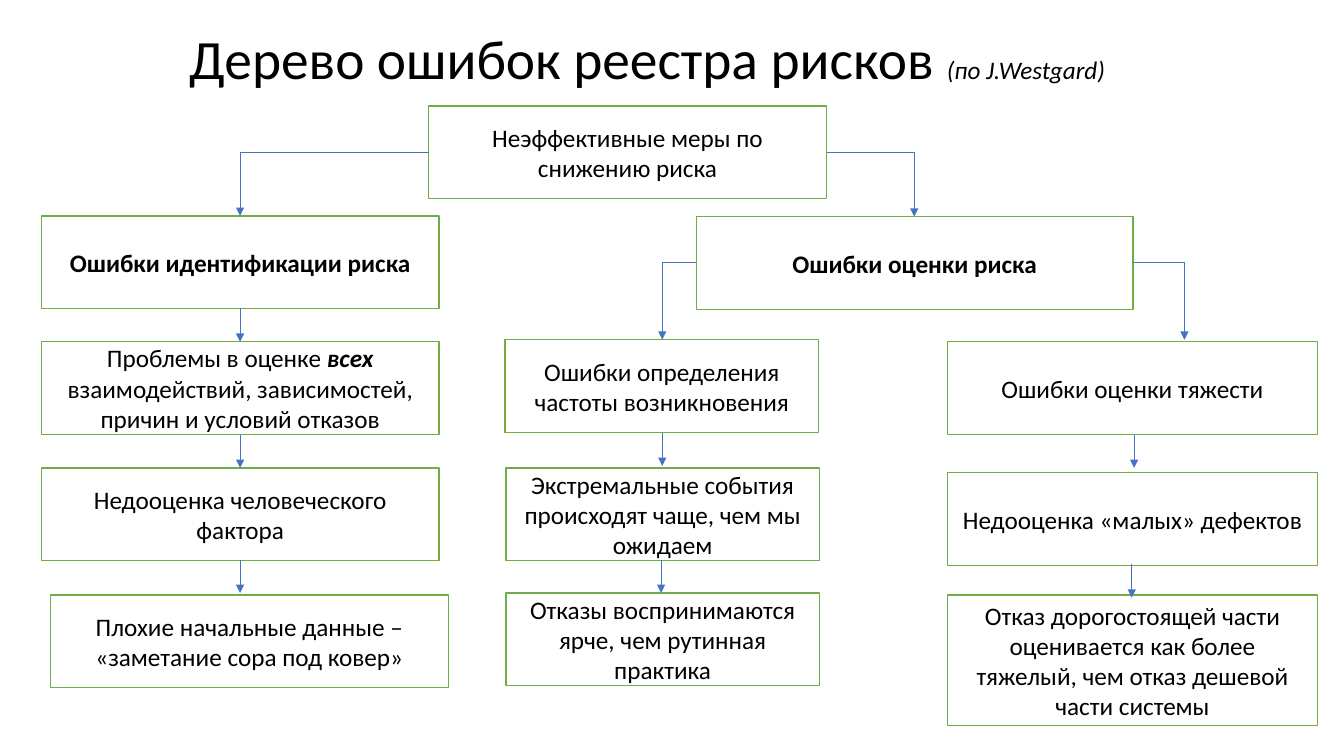
from dataclasses import dataclass

from lxml import etree
from pptx import Presentation
from pptx.dml.color import RGBColor
from pptx.enum.shapes import MSO_CONNECTOR, MSO_SHAPE
from pptx.enum.text import MSO_ANCHOR, PP_ALIGN
from pptx.oxml.ns import qn
from pptx.slide import Slide
from pptx.text.text import _Paragraph
from pptx.util import Cm, Pt

RECTANGLE = MSO_SHAPE.RECTANGLE
STRAIGHT = MSO_CONNECTOR.STRAIGHT
ELBOW = MSO_CONNECTOR.ELBOW
MIDDLE = MSO_ANCHOR.MIDDLE
CENTER = PP_ALIGN.CENTER

FONT = "Calibri"
BLACK = "000000"
WHITE = "FFFFFF"
GREEN = "70AD47"
BLUE = "4472C4"
BODY_SIZE = 18
BOX_HEIGHT = 2.34
ARROW_LENGTH = 0.84
LEFT_WIDTH = 10.03
MIDDLE_WIDTH = 7.9
RIGHT_WIDTH = 9.32


@dataclass(frozen=True)
class Span:
    text: str
    bold: bool | None = None
    italic: bool | None = None
    size: float | None = None


@dataclass(frozen=True)
class Box:
    left: float
    top: float
    width: float
    spans: tuple[Span, ...]
    height: float = BOX_HEIGHT
    bold: bool = False


@dataclass(frozen=True)
class Arrow:
    start_x: float
    start_y: float
    end_x: float
    end_y: float


TITLE = (
    Span("Дерево ошибок реестра рисков "),
    Span("(по J.Westgard)", italic=True, size=18),
)

BOXES = (
    Box(10.8, 2.67, LEFT_WIDTH, (Span("Неэффективные меры по снижению риска"),)),
    Box(1.04, 5.44, LEFT_WIDTH, (Span("Ошибки идентификации риска"),), bold=True),
    Box(17.55, 5.46, 11, (Span("Ошибки оценки риска"),), bold=True),
    Box(1.04, 8.61, LEFT_WIDTH, (
        Span("Проблемы в оценке "),
        Span("всех ", bold=True, italic=True),
        Span("взаимодействий, зависимостей, причин и условий отказов"),
    )),
    Box(1.04, 11.79, LEFT_WIDTH, (Span("Недооценка человеческого фактора"),)),
    Box(1.27, 14.99, LEFT_WIDTH, (
        Span("Плохие начальные данные – «заметание сора под ковер»"),
    )),
    Box(12.73, 8.56, MIDDLE_WIDTH, (
        Span("Ошибки определения частоты возникновения"),
    )),
    Box(12.75, 11.79, MIDDLE_WIDTH, (
        Span("Экстремальные события происходят чаще, чем мы ожидаем"),
    )),
    Box(12.75, 14.94, MIDDLE_WIDTH, (
        Span("Отказы воспринимаются ярче, чем рутинная практика"),
    )),
    Box(23.88, 8.61, RIGHT_WIDTH, (Span("Ошибки оценки тяжести"),)),
    Box(23.88, 11.91, RIGHT_WIDTH, (Span("Недооценка «малых» дефектов"),)),
    Box(23.88, 14.99, RIGHT_WIDTH, (
        Span("Отказ дорогостоящей части оценивается как более тяжелый, "
             "чем отказ дешевой части системы"),
    ), height=3.3),
)

BRANCHES = (
    Arrow(10.8, 3.84, 6.05, 5.44),
    Arrow(20.83, 3.84, 23.04, 5.46),
    Arrow(17.55, 6.6, 16.69, 8.56),
    Arrow(28.55, 6.6, 29.85, 8.56),
)

STEP_STARTS = (
    (6.05, 7.77), (6.05, 10.95), (6.05, 14.1),
    (16.69, 10.9), (16.66, 14.1),
    (28.58, 10.95), (28.52, 14.22),
)
STEPS = tuple(Arrow(x, y, x, y + ARROW_LENGTH) for x, y in STEP_STARTS)


def color(value: str) -> RGBColor:
    return RGBColor.from_string(value)


def write(paragraph: _Paragraph, spans: tuple[Span, ...], size: float) -> None:
    paragraph.font.name = FONT
    paragraph.font.size = Pt(size)
    paragraph.font.color.rgb = color(BLACK)
    for span in spans:
        run = paragraph.add_run()
        run.text = span.text
        run.font.bold = span.bold
        run.font.italic = span.italic
        if span.size:
            run.font.size = Pt(span.size)


def draw_title(slide: Slide) -> None:
    shape = slide.shapes.add_textbox(Cm(4.52), Cm(0.76), Cm(27.66), Cm(1.57))
    frame = shape.text_frame
    frame.word_wrap = True
    frame.vertical_anchor = MIDDLE
    paragraph = frame.paragraphs[0]
    paragraph.line_spacing = 0.9
    write(paragraph, TITLE, 39.6)


def draw_box(slide: Slide, box: Box) -> None:
    shape = slide.shapes.add_shape(
        RECTANGLE, Cm(box.left), Cm(box.top), Cm(box.width), Cm(box.height)
    )
    shape.shadow.inherit = False
    shape.fill.solid()
    shape.fill.fore_color.rgb = color(WHITE)
    shape.line.color.rgb = color(GREEN)
    shape.line.width = Pt(1)
    frame = shape.text_frame
    frame.word_wrap = True
    frame.vertical_anchor = MIDDLE
    paragraph = frame.paragraphs[0]
    paragraph.alignment = CENTER
    paragraph.font.bold = box.bold
    write(paragraph, box.spans, BODY_SIZE)


def draw_arrow(slide: Slide, arrow: Arrow, kind: MSO_CONNECTOR) -> None:
    connector = slide.shapes.add_connector(
        kind, Cm(arrow.start_x), Cm(arrow.start_y), Cm(arrow.end_x), Cm(arrow.end_y)
    )
    connector.line.color.rgb = color(BLUE)
    connector.line.width = Pt(0.5)
    properties = connector._element.spPr
    line = properties.find(qn("a:ln"))
    etree.SubElement(line, qn("a:tailEnd"), type="triangle")
    etree.SubElement(properties, qn("a:effectLst"))
    if kind == ELBOW:
        properties.find(qn("a:prstGeom")).set("prst", "bentConnector2")
        if arrow.end_x < arrow.start_x:
            transform = properties.find(qn("a:xfrm"))
            del transform.attrib["flipH"]
            transform.set("rot", "10800000")
            transform.set("flipV", "1")


def main() -> None:
    presentation = Presentation()
    presentation.slide_width = Cm(33.87)
    presentation.slide_height = Cm(19.05)
    slide = presentation.slides.add_slide(presentation.slide_layouts[6])
    draw_title(slide)
    for box in BOXES:
        draw_box(slide, box)
    for branch in BRANCHES:
        draw_arrow(slide, branch, ELBOW)
    for step in STEPS:
        draw_arrow(slide, step, STRAIGHT)
    presentation.save("out.pptx")


if __name__ == "__main__":
    main()
